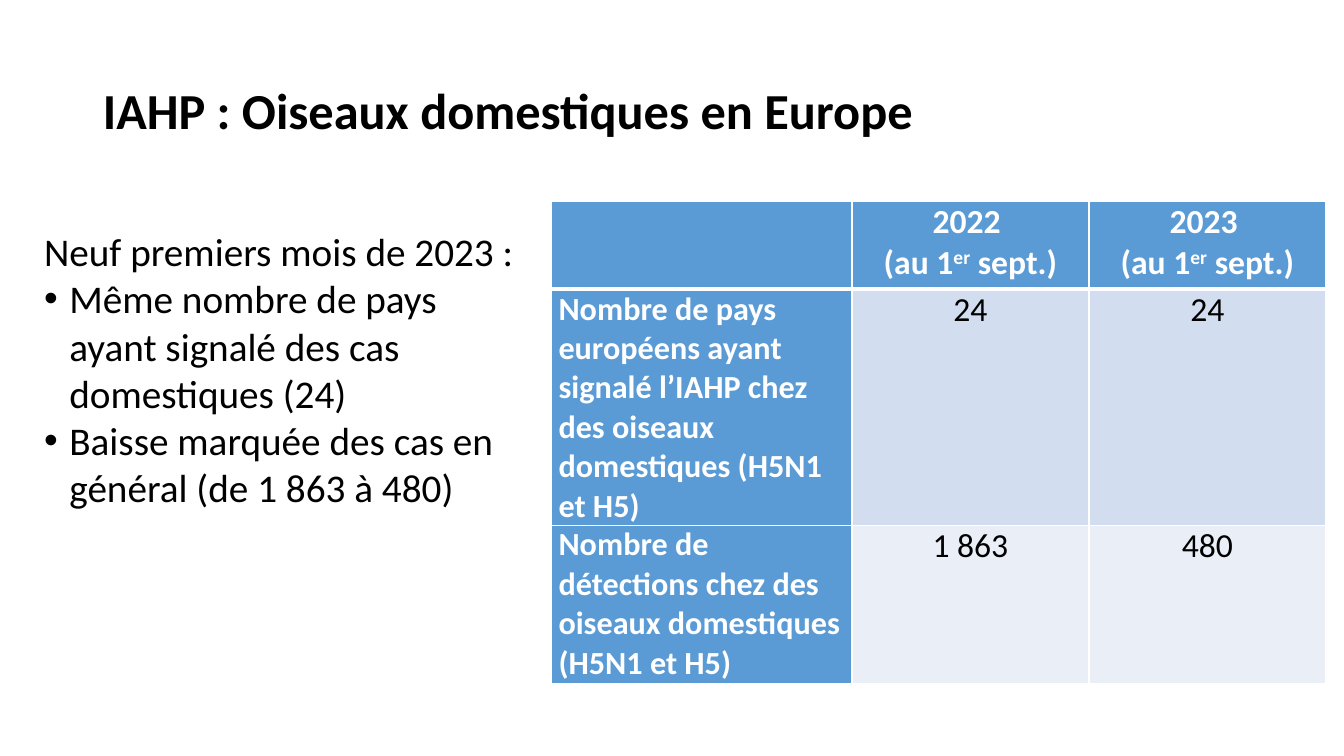
"""Build the slide on avian influenza in domestic birds in Europe."""
from typing import NamedTuple

from lxml.etree import SubElement
from pptx import Presentation
from pptx.dml.color import RGBColor
from pptx.enum.text import MSO_ANCHOR, MSO_AUTO_SIZE, PP_ALIGN
from pptx.oxml.ns import qn
from pptx.text.text import TextFrame
from pptx.util import Emu, Pt

FONT = "Calibri"
BLACK, WHITE, BLUE = "000000", "FFFFFF", "5B9BD5"
COLS = [298, 235, 235]


class Line(NamedTuple):
    text: str
    bullet: bool = False


class Row(NamedTuple):
    height: int
    fill: str
    label: str
    values: list[str]
    head: bool = False


NOTES = [
    Line("Neuf premiers mois de 2023 :"),
    Line("Même nombre de pays ayant signalé des cas domestiques (24)", True),
    Line("Baisse marquée des cas en général (de 1 863 à 480)", True),
]
ROWS = [
    Row(87, BLUE, "", [f"{year} \n(au 1^er^ sept.)" for year in (2022, 2023)], True),
    Row(234, "D2DEEF", "Nombre de pays européens ayant signalé l’IAHP chez des "
        "oiseaux domestiques (H5N1 et H5)", ["24", "24"]),
    Row(157, "EAEFF7", "Nombre de détections chez des oiseaux domestiques "
        "(H5N1 et H5)", ["1 863", "480"]),
]


def px(count: int) -> Emu:
    """Turn px, a hundred to the inch, into EMU."""
    return Emu(count * 9144)


def rgb(code: str) -> RGBColor:
    """Turn a hex string into a colour."""
    return RGBColor.from_string(code)


def write(frame: TextFrame, lines: list[Line], *, size: int, color: str = BLACK,
          bold: bool = False, align: PP_ALIGN = PP_ALIGN.LEFT,
          spacing: float = 1.0) -> None:
    """Write lines into a frame, raising the parts set between carets."""
    frame.word_wrap = True
    for index, line in enumerate(lines):
        para = frame.add_paragraph() if index else frame.paragraphs[0]
        para.alignment, para.line_spacing = align, spacing
        para.space_before = para.space_after = Pt(0)
        if line.bullet:
            props = para._p.get_or_add_pPr()
            props.set("marL", str(px(25)))
            props.set("indent", str(-px(25)))
            SubElement(props, qn("a:buFont"), typeface="Arial")
            SubElement(props, qn("a:buChar"), char="•")
        for part, text in enumerate(line.text.split("^")):
            run = para.add_run()
            run.text = text
            font = run.font
            font.name, font.size, font.bold = FONT, Pt(size), bold
            font.color.rgb = rgb(color)
            if part % 2:
                run._r.get_or_add_rPr().set("baseline", "30000")


def edge(cell, top: int = 1, bottom: int = 1) -> None:
    """Give a table cell white borders, with widths in points."""
    props = cell._tc.get_or_add_tcPr()
    for side, width in zip("LRTB", (1, 1, top, bottom)):
        border = SubElement(props, qn(f"a:ln{side}"), w=str(Pt(width)))
        fill = SubElement(border, qn("a:solidFill"))
        SubElement(fill, qn("a:srgbClr"), val=WHITE)


def add_grid(slide) -> None:
    """Add the table comparing both years."""
    height = sum(row.height for row in ROWS)
    grid = slide.shapes.add_table(len(ROWS), len(COLS), px(547), px(200),
                                  px(sum(COLS)), px(height)).table
    grid.horz_banding = False
    for column, width in zip(grid.columns, COLS):
        column.width = px(width)
    for y, row in enumerate(ROWS):
        grid.rows[y].height = px(row.height)
        for x, text in enumerate([row.label, *row.values]):
            cell = grid.cell(y, x)
            strong = row.head or x == 0
            edge(cell, top=3 if y == 1 else 1, bottom=3 if row.head else 1)
            cell.fill.solid()
            cell.fill.fore_color.rgb = rgb(BLUE if strong else row.fill)
            cell.margin_left = cell.margin_right = px(7)
            cell.margin_top = cell.margin_bottom = 0
            if text:
                write(cell.text_frame, [Line(part) for part in text.split("\n")],
                      size=24 if x else 23, color=WHITE if strong else BLACK,
                      bold=strong, align=PP_ALIGN.CENTER if x else PP_ALIGN.LEFT)


def main() -> None:
    """Build and save the slide."""
    deck = Presentation()
    deck.slide_width, deck.slide_height = px(1333), px(750)
    slide = deck.slides.add_slide(deck.slide_layouts[5])
    title = slide.shapes.title
    title.left, title.top, title.width, title.height = map(px, (92, 40, 1150, 145))
    title.text_frame.auto_size = MSO_AUTO_SIZE.NONE
    title.text_frame.vertical_anchor = MSO_ANCHOR.MIDDLE
    write(title.text_frame, [Line("IAHP : Oiseaux domestiques en Europe")],
          size=36, bold=True, spacing=0.9)
    notes = slide.shapes.add_textbox(*map(px, (34, 221, 496, 455)))
    write(notes.text_frame, NOTES, size=28)
    add_grid(slide)
    deck.save("out.pptx")


if __name__ == "__main__":
    main()
